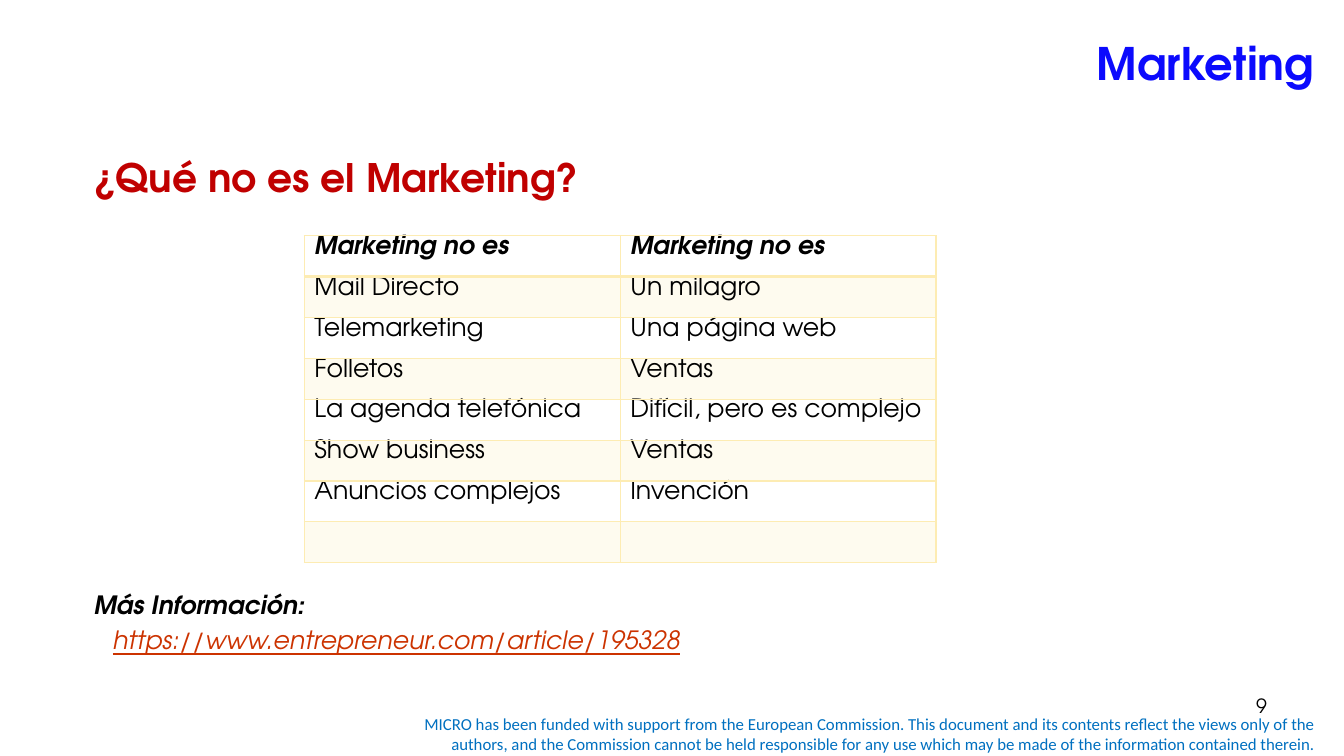
"""Builds the slide that lists what marketing is not."""
from dataclasses import dataclass

from lxml.etree import SubElement
from pptx import Presentation
from pptx.dml.color import RGBColor
from pptx.enum.text import MSO_ANCHOR, MSO_AUTO_SIZE, PP_ALIGN
from pptx.oxml.ns import qn
from pptx.util import Cm, Pt


@dataclass(frozen=True)
class Theme:
    """Fonts, colours and type sizes."""
    font: str = "TeX Gyre Adventor"
    footer_font: str = "Calibri"
    title: str = "0B0AFD"
    heading: str = "C00000"
    text: str = "000000"
    link: str = "CC3300"
    footer: str = "0070C0"
    table: str = "FDECB3"
    title_size: int = 32
    heading_size: int = 28
    text_size: int = 18
    number_size: int = 14
    footer_size: int = 12


theme = Theme()


def style(paragraph, size, color, bold=False, italic=False, name=theme.font):
    """Set the font of a whole paragraph."""
    font = paragraph.font
    font.name, font.size, font.bold, font.italic = name, Pt(size), bold, italic
    font.color.rgb = RGBColor.from_string(color)


def place(shape, left, top, width, height, anchor=MSO_ANCHOR.TOP):
    """Position a text shape in centimetres and return its text frame."""
    shape.left, shape.top, shape.width, shape.height = Cm(left), Cm(top), Cm(width), Cm(height)
    frame = shape.text_frame
    frame.word_wrap = True
    frame.auto_size = MSO_AUTO_SIZE.NONE
    frame.vertical_anchor = anchor
    return frame


presentation = Presentation()
presentation.slide_width, presentation.slide_height = Cm(33.87), Cm(19.05)
slide = presentation.slides.add_slide(presentation.slide_layouts[1])

title_frame = place(slide.shapes.title, 2.9, 0, 30.48, 3.18, MSO_ANCHOR.MIDDLE)
title_frame.text = "Marketing"
title_frame.paragraphs[0].alignment = PP_ALIGN.RIGHT
style(title_frame.paragraphs[0], theme.title_size, theme.title, bold=True)

body_frame = place(slide.placeholders[1], 2.11, 3.73, 30.48, 14.17)
body_frame.text = "¿Qué no es el Marketing?\nMás Información:\nhttps://www.entrepreneur.com/article/195328"
heading, more, link = body_frame.paragraphs
for paragraph, indent, space in ((heading, 0, 0), (more, 0, 278), (link, 0.48, 3.6)):
    properties = paragraph._p.get_or_add_pPr()
    properties.set("marL", str(Cm(indent)))
    properties.set("indent", "0")
    paragraph.space_before = Pt(space)
    SubElement(properties, qn("a:buNone"))
style(heading, theme.heading_size, theme.heading, bold=True)
style(more, theme.text_size, theme.text, bold=True, italic=True)
style(link, theme.text_size, theme.link, italic=True)
link.font.underline = True

rows = [
    ("Marketing no es", "Marketing no es"),
    ("Mail Directo", "Un milagro"),
    ("Telemarketing", "Una página web"),
    ("Folletos", "Ventas"),
    ("La agenda telefónica", "Difícil, pero es complejo"),
    ("Show business", "Ventas"),
    ("Anuncios complejos", "Invención"),
    ("", ""),
]
table = slide.shapes.add_table(len(rows), 2, Cm(7.67), Cm(5.94), Cm(15.92), Cm(8.24)).table
table.first_row = table.horz_banding = False
for row_index, row in enumerate(rows):
    for column_index, text in enumerate(row):
        cell = table.cell(row_index, column_index)
        cell.text = text
        cell.margin_top = cell.margin_bottom = 0
        is_header = row_index == 0
        style(cell.text_frame.paragraphs[0], theme.text_size, theme.text, is_header, is_header)
        properties = cell._tc.get_or_add_tcPr()
        for side in ("lnL", "lnR", "lnT", "lnB"):
            is_thick = (row_index, side) in ((0, "lnB"), (1, "lnT"))
            line = SubElement(properties, qn(f"a:{side}"), w=str(Pt(2 if is_thick else 1)))
            SubElement(SubElement(line, qn("a:solidFill")), qn("a:srgbClr"), val=theme.table)
        if row_index % 2:
            cell.fill.solid()
            cell.fill.fore_color.rgb = RGBColor.from_string(theme.table)
            color = properties.find(qn("a:solidFill")).find(qn("a:srgbClr"))
            SubElement(color, qn("a:alpha"), val="20000")
        else:
            cell.fill.background()

footer_text = (
    "MICRO has been funded with support from the European Commission. "
    "This document and its contents reflect the views only of the authors, "
    "and the Commission cannot be held responsible for any use which may be made "
    "of the information contained therein."
)
small_texts = [
    (footer_text, (9.53, 17.86, 23.88, 1.27, MSO_ANCHOR.MIDDLE), theme.footer_size, theme.footer, theme.footer_font),
    ("9", (24.28, 17.35, 7.9, 1.32), theme.number_size, theme.text, theme.font),
]
for text, box, size, color, name in small_texts:
    frame = place(slide.shapes.add_textbox(0, 0, 0, 0), *box)
    frame.text = text
    frame.paragraphs[0].alignment = PP_ALIGN.RIGHT
    style(frame.paragraphs[0], size, color, name=name)

presentation.save("out.pptx")
